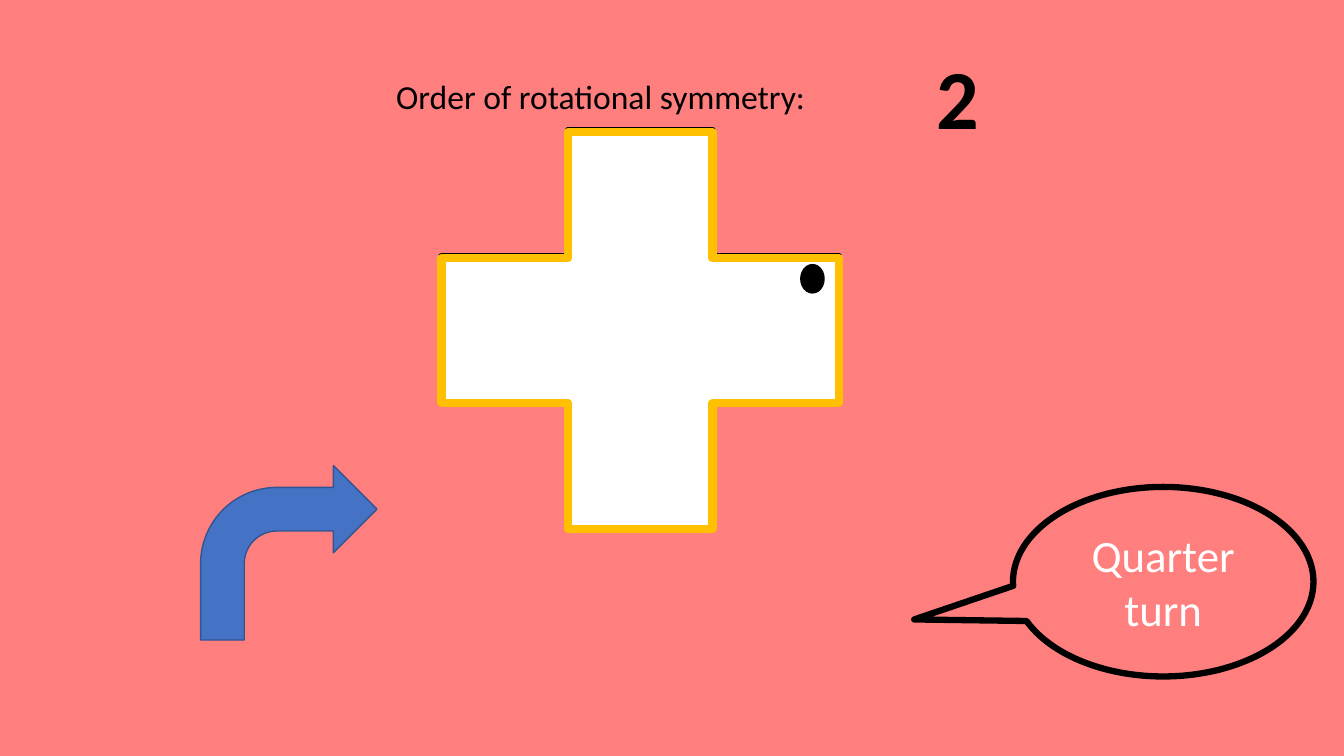
import dataclasses

import pptx
import pptx.dml.color
import pptx.enum.shapes
import pptx.enum.text
import pptx.util

Pt = pptx.util.Pt
SHAPE = pptx.enum.shapes.MSO_SHAPE
ALIGN = pptx.enum.text.PP_ALIGN
ANCHOR = pptx.enum.text.MSO_ANCHOR


@dataclasses.dataclass(frozen=True)
class Theme:
    """Colours, font and type sizes of the slide."""
    background: str = "FF7F7F"
    ink: str = "000000"
    paper: str = "FFFFFF"
    gold: str = "FFC000"
    blue: str = "4472C4"
    navy: str = "325491"
    font: str = "Calibri"
    heading: int = 24
    speech: int = 32
    answer: int = 60


THEME = Theme()


def rgb(code):
    """Return the colour object for a hex code."""
    return pptx.dml.color.RGBColor.from_string(code)


def write(frame, text, *, size, color=THEME.ink, bold=False, align=ALIGN.LEFT, anchor=ANCHOR.TOP):
    """Fill a text frame with one formatted paragraph."""
    frame.word_wrap = True
    frame.auto_size = pptx.enum.text.MSO_AUTO_SIZE.NONE
    frame.vertical_anchor = anchor
    paragraph = frame.paragraphs[0]
    paragraph.alignment = align
    run = paragraph.add_run()
    run.text = text
    run.font.name = THEME.font
    run.font.size = Pt(size)
    run.font.bold = bold
    run.font.color.rgb = rgb(color)


def draw(shapes, kind, box, *, fill=None, line, weight=1, adjust=(), turn=0):
    """Add a preset shape in a box given in points."""
    figure = shapes.add_shape(kind, *map(Pt, box))
    figure.shadow.inherit = False
    if fill:
        figure.fill.solid()
        figure.fill.fore_color.rgb = rgb(fill)
    else:
        figure.fill.background()
    figure.line.color.rgb = rgb(line)
    figure.line.width = Pt(weight)
    for index, value in enumerate(adjust):
        figure.adjustments[index] = value
    figure.rotation = turn
    return figure


def add_question(slide, left, top, width, height):
    """Place the question as the title, with its answer to the right."""
    question = slide.shapes.title
    question.left, question.top = Pt(left), Pt(top + 21.6)
    question.width, question.height = Pt(width - 76.3), Pt(36)
    write(question.text_frame, "Order of rotational symmetry:", size=THEME.heading)
    answer = slide.shapes.add_textbox(Pt(left + width - 76.3), Pt(top), Pt(76.3), Pt(height))
    write(answer.text_frame, "2", size=THEME.answer, bold=True)


def add_crosses(slide, left, top, side):
    """Place the fixed cross and the turned cross with its marker dot."""
    arms = (0.318,)
    draw(slide.shapes, SHAPE.CROSS, (left, top, side, side),
         fill=THEME.paper, line=THEME.ink, weight=4.5, adjust=arms)
    turned = slide.shapes.add_group_shape().shapes
    draw(turned, SHAPE.CROSS, (left, top + 1.4, side, side),
         fill=THEME.paper, line=THEME.gold, weight=6, adjust=arms, turn=90)
    draw(turned, SHAPE.OVAL, (left + 254.8, top + 97.9, 20.2, 16.6),
         fill=THEME.ink, line=THEME.ink, turn=90)


def add_turn(slide, left, top, width, height):
    """Place the turning arrow at the left and its callout at the right."""
    callout = draw(slide.shapes, SHAPE.OVAL_CALLOUT,
                   (left + width - 214.6, top + 15.2, 214.6, 135.4),
                   line=THEME.ink, weight=4.5, adjust=(-0.829, 0.199))
    write(callout.text_frame, "Quarter turn", size=THEME.speech, color=THEME.paper,
          align=ALIGN.CENTER, anchor=ANCHOR.MIDDLE)
    draw(slide.shapes, SHAPE.BENT_ARROW, (left, top, 126, height),
         fill=THEME.blue, line=THEME.navy)


def main():
    """Build and save the slide."""
    deck = pptx.Presentation()
    deck.slide_width, deck.slide_height = Pt(960), Pt(540)
    slide = deck.slides.add_slide(deck.slide_layouts[5])
    slide.background.fill.solid()
    slide.background.fill.fore_color.rgb = rgb(THEME.background)
    add_question(slide, 275.8, 28.8, 462.2, 79.9)
    add_crosses(slide, 315.4, 92.9, 283.7)
    add_turn(slide, 143.3, 332.6, 794.9, 124.6)
    deck.save("out.pptx")


if __name__ == "__main__":
    main()
